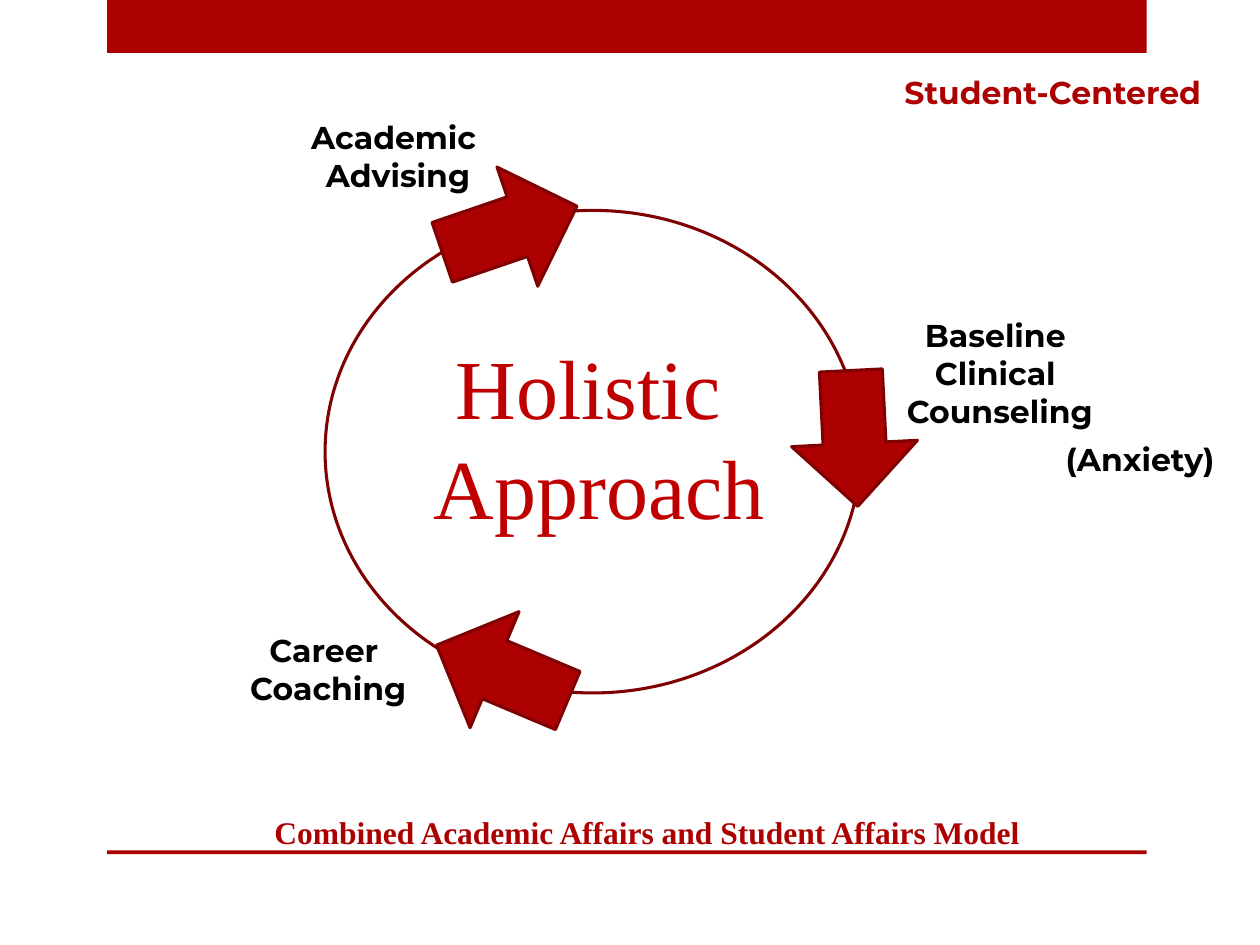
"""Build the Holistic Approach cycle slide."""
from pptx import Presentation
from pptx import util as u
from pptx.dml import color
from pptx.enum import shapes, text

RED, DARK_RED, TITLE_RED, BLACK = "AD0101", "800101", "C00000", "000000"
SERIF, SANS = "Times New Roman", "Montserrat"


def paint(target, value):
    target.solid()
    target.fore_color.rgb = color.RGBColor.from_string(value)


def add_shape(kind, box, fill=None, line=None):
    shape = slide.shapes.add_shape(kind, *map(u.Inches, box))
    shape.shadow.inherit = False
    if fill:
        paint(shape.fill, fill)
    else:
        shape.fill.background()
    if line:
        paint(shape.line.fill, line)
        shape.line.width = u.Pt(1.75)
    else:
        shape.line.fill.background()
    return shape


presentation = Presentation()
presentation.slide_width = u.Inches(10)
presentation.slide_height = u.Inches(7.5)
slide = presentation.slides.add_slide(presentation.slide_layouts[6])

for top, height in ((0, 0.42), (6.75, 0.03)):
    add_shape(shapes.MSO_SHAPE.RECTANGLE, (0.85, top, 8.25, height), fill=RED)

add_shape(shapes.MSO_SHAPE.OVAL, (2.58, 1.67, 4.25, 3.83), line=DARK_RED)

arrows = (
    (6.24, 2.98, 1.08, 87.1),
    (3.42, 4.84, 1.13, 202.9),
    (3.48, 1.32, 1.13, 341.1),
)
for left, top, width, rotation in arrows:
    arrow = add_shape(shapes.MSO_SHAPE.RIGHT_ARROW, (left, top, width, 1), RED, DARK_RED)
    arrow.rotation = rotation

CENTER, LEFT = text.PP_ALIGN.CENTER, text.PP_ALIGN.LEFT
labels = (
    ((3.33, 2.61, 2.85, 1.72), ("Holistic ", "Approach"), CENTER, SERIF, 48, TITLE_RED, False),
    ((2.33, 0.89, 1.66, 0.71), ("Academic ", "Advising"), CENTER, SANS, 18, BLACK, True),
    ((7.07, 2.46, 1.73, 1.01), ("Baseline ", "Clinical ", "Counseling"), CENTER, SANS, 18, BLACK, True),
    ((1.86, 4.96, 1.49, 0.71), ("Career ", "Coaching"), CENTER, SANS, 18, BLACK, True),
    ((8.36, 3.44, 1.45, 0.71), ("(Anxiety)",), LEFT, SANS, 18, BLACK, True),
    ((2.08, 6.4, 6.18, 0.4), ("Combined Academic Affairs and Student Affairs Model",), LEFT, SERIF, 18, RED, True),
    ((7.08, 0.53, 2.63, 0.4), ("Student-Centered",), LEFT, SANS, 18, RED, True),
)
for box, lines, alignment, font_name, size, font_color, bold in labels:
    frame = slide.shapes.add_textbox(*map(u.Inches, box)).text_frame
    frame.word_wrap = False
    for index, line in enumerate(lines):
        paragraph = frame.add_paragraph() if index else frame.paragraphs[0]
        paragraph.alignment = alignment
        run = paragraph.add_run()
        run.text = line
        run.font.name = font_name
        run.font.size = u.Pt(size)
        run.font.bold = bold
        paint(run.font.fill, font_color)

presentation.save("out.pptx")
